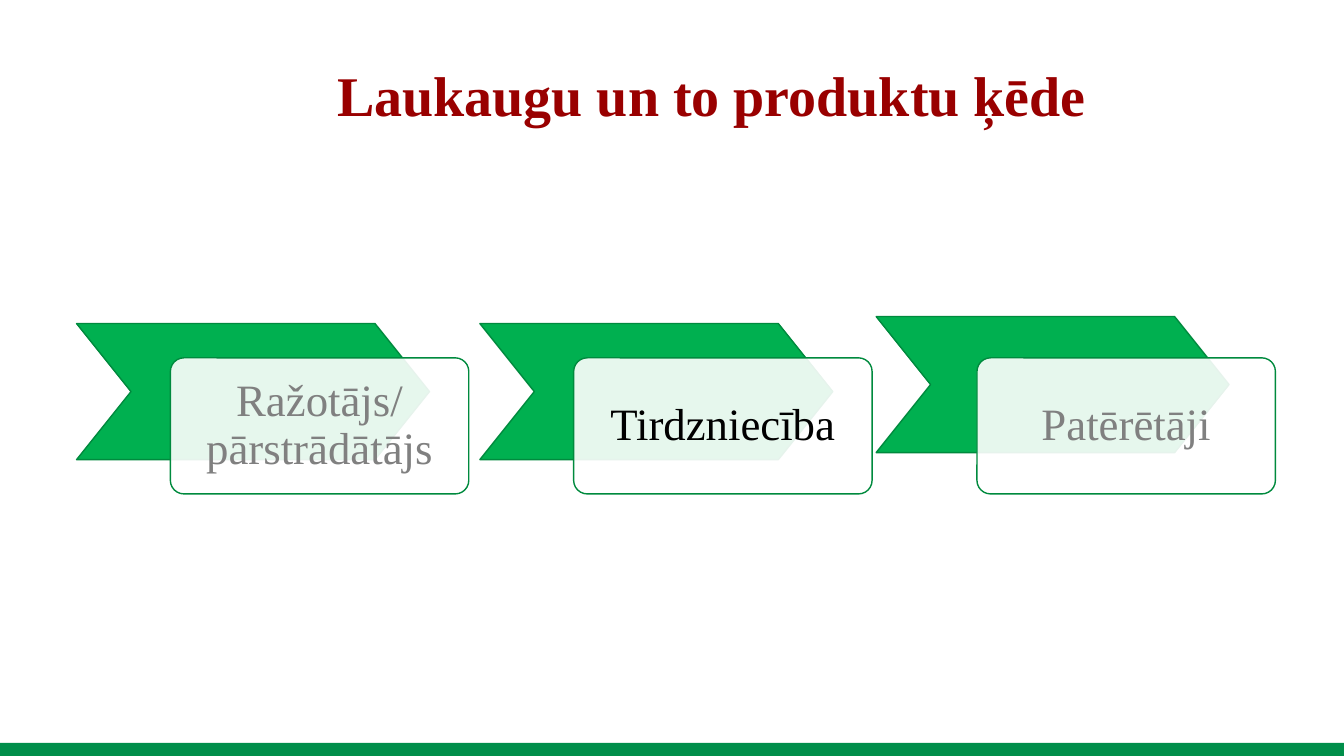
from dataclasses import dataclass

from lxml import etree
from pptx import Presentation
from pptx import util as u
from pptx.dml.color import RGBColor
from pptx.enum import shapes, text
from pptx.oxml.ns import qn


@dataclass(frozen=True)
class Theme:
    font: str = "Times New Roman"
    title_size: int = 40
    step_size: int = 32
    title: str = "990000"
    footer: str = "008E4A"
    arrow: str = "00B050"
    outline: str = "008A3E"
    card: str = "FFFFFF"
    muted: str = "808080"
    active: str = "000000"


theme = Theme()

deck = Presentation()
deck.slide_width = u.Inches(13.33)
deck.slide_height = u.Inches(7.5)
page = deck.slides.add_slide(deck.slide_layouts[6])


def add_block(kind, left, top, width, height, fill, outline=None):
    block = page.shapes.add_shape(
        kind, u.Inches(left), u.Inches(top), u.Inches(width), u.Inches(height))
    block.shadow.inherit = False
    block.fill.solid()
    block.fill.fore_color.rgb = RGBColor.from_string(fill)
    if outline:
        block.line.color.rgb = RGBColor.from_string(outline)
        block.line.width = u.Pt(1)
    else:
        block.line.fill.background()
    return block


def write_line(frame, words, size, color, bold=False):
    frame.word_wrap = True
    para = frame.paragraphs[0]
    para.alignment = text.PP_ALIGN.CENTER
    para.line_spacing = 0.9
    span = para.add_run()
    span.text = words
    span.font.name = theme.font
    span.font.size = u.Pt(size)
    span.font.bold = bold
    span.font.color.rgb = RGBColor.from_string(color)


# Footer band
add_block(shapes.MSO_SHAPE.RECTANGLE, 0, 7.37, 13.33, 0.13, theme.footer)

# Chain of steps: label, text colour, arrow left, arrow top
steps = [
    ("Ražotājs/ pārstrādātājs", theme.muted, 0.76, 3.21),
    ("Tirdzniecība", theme.active, 4.76, 3.21),
    ("Patērētāji", theme.muted, 8.69, 3.14),
]
for index, (label, color, arrow_left, arrow_top) in enumerate(steps):
    arrow = add_block(shapes.MSO_SHAPE.CHEVRON, arrow_left, arrow_top,
                      3.5, 1.35, theme.arrow, theme.outline)
    arrow.adjustments[0] = 0.4

    card = add_block(shapes.MSO_SHAPE.ROUNDED_RECTANGLE, 1.69 + 4 * index, 3.55,
                     2.96, 1.35, theme.card, theme.outline)
    card.adjustments[0] = 0.1
    # Let the arrow show faintly through the card
    tint = card.fill._xPr.find(qn("a:solidFill"))[0]
    etree.SubElement(tint, qn("a:alpha")).set("val", "90000")

    frame = card.text_frame
    frame.vertical_anchor = text.MSO_ANCHOR.MIDDLE
    frame.margin_left = frame.margin_right = u.Inches(0.25)
    frame.margin_top = frame.margin_bottom = u.Inches(0.25)
    write_line(frame, label, theme.step_size, color)

# Title
title_box = page.shapes.add_textbox(
    u.Inches(2.43), u.Inches(0.63), u.Inches(9.25), u.Inches(0.71))
write_line(title_box.text_frame, "Laukaugu un to produktu ķēde",
           theme.title_size, theme.title, bold=True)

deck.save("out.pptx")
